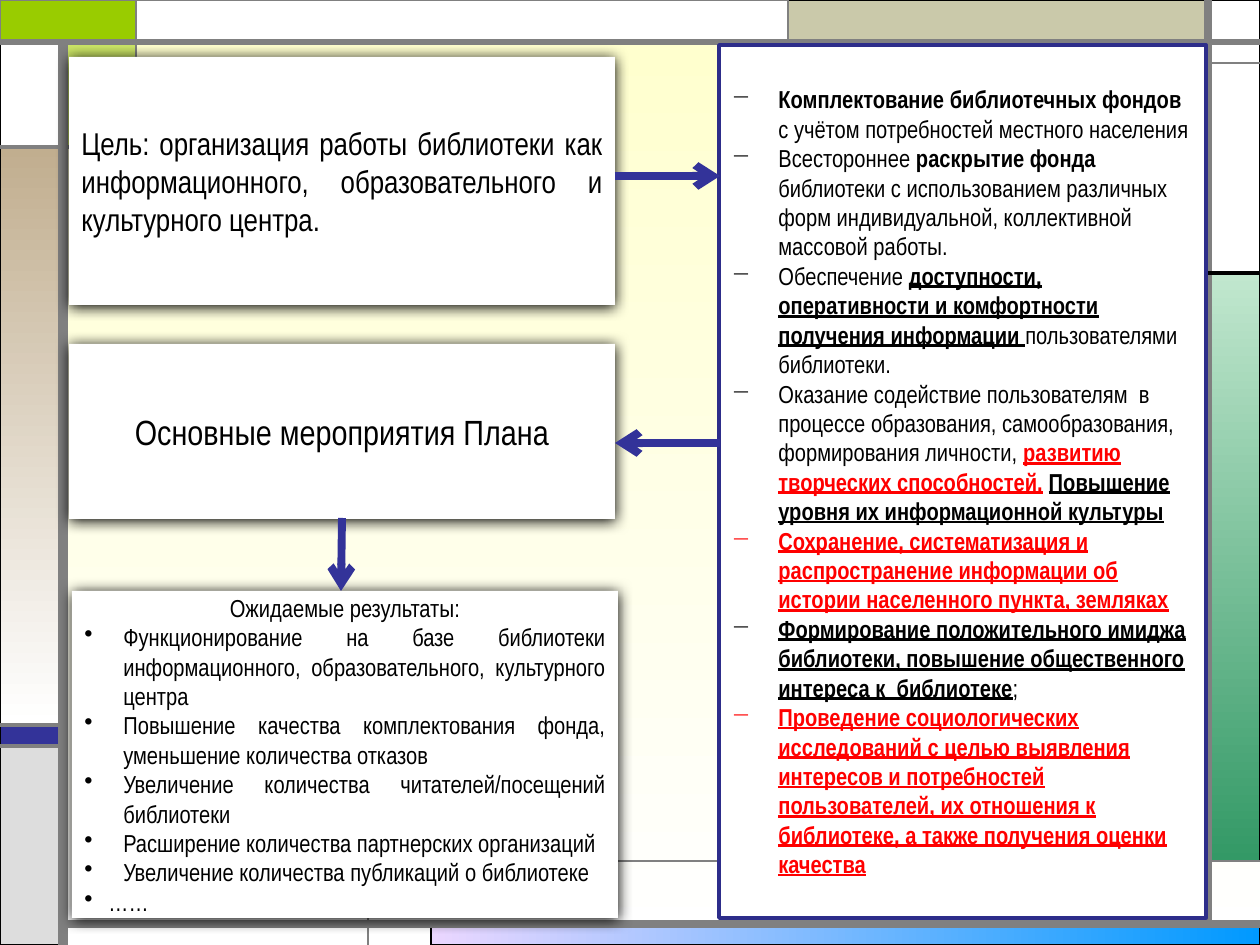
from lxml import etree
from pptx import Presentation
from pptx.dml.color import RGBColor
from pptx.enum.shapes import MSO_CONNECTOR, MSO_SHAPE
from pptx.enum.text import MSO_ANCHOR, PP_ALIGN
from pptx.oxml.ns import qn
from pptx.util import Pt

PX = 914400 / 126
WIDTH, HEIGHT = 1260, 945
RECT, STRAIGHT = MSO_SHAPE.RECTANGLE, MSO_CONNECTOR.STRAIGHT
MIDDLE = MSO_ANCHOR.MIDDLE
LEFT, CENTER, JUSTIFY = PP_ALIGN.LEFT, PP_ALIGN.CENTER, PP_ALIGN.JUSTIFY
RIGHTWARD, DOWNWARD = 0, 270
FONT = "Arial Narrow"
COLORS = {
    "black": "000000", "white": "FFFFFF", "gray": "808080", "red": "FF0000",
    "cream": "FFFFCC", "lilac": "EBD7FF", "azure": "0099FF", "mint": "C1E7CE",
    "green": "339966", "indigo": "333399", "navy": "2D2D8A", "silver": "DDDDDD",
    "khaki": "CAC9AA", "lime": "99CC00", "tan": "C1AE8F",
}
PLAIN = {"bold": False, "underline": False}
BOLD = {"bold": True, "underline": False}
MARKED = {"bold": True, "underline": True}
RED = {**MARKED, "color": "red"}

TASKS = [
    [("Комплектование библиотечных фондов ", BOLD),
     ("с учётом потребностей местного населения", PLAIN)],
    [("Всестороннее ", PLAIN), ("раскрытие фонда ", BOLD),
     ("библиотеки с использованием различных форм индивидуальной, "
      "коллективной массовой работы.", PLAIN)],
    [("Обеспечение ", PLAIN),
     ("доступности, оперативности и комфортности получения информации ", MARKED),
     ("пользователями библиотеки.", PLAIN)],
    [("Оказание содействие пользователям  в процессе образования, "
      "самообразования, формирования личности, ", PLAIN),
     ("развитию творческих способностей.", RED), (" ", PLAIN),
     ("Повышение уровня их информационной культуры", MARKED)],
    [("Сохранение, систематизация и распространение информации об истории "
      "населенного пункта, земляках", RED)],
    [("Формирование положительного имиджа библиотеки, повышение "
      "общественного интереса к  библиотеке", MARKED), (";", PLAIN)],
    [("Проведение социологических исследований с целью выявления интересов и "
      "потребностей пользователей, их отношения к библиотеке, а также "
      "получения оценки качества", RED)],
]
RESULTS = [
    "Функционирование на базе библиотеки информационного, образовательного, "
    "культурного центра",
    "Повышение качества комплектования фонда, уменьшение количества отказов",
    "Увеличение количества читателей/посещений библиотеки",
    "Расширение количества партнерских организаций",
    "Увеличение количества публикаций о библиотеке",
]


def emu(*lengths):
    return [round(length * PX) for length in lengths]


def rgb(name):
    return RGBColor.from_string(COLORS[name])


def paint_gradient(fill, names, angle):
    fill.gradient()
    fill.gradient_angle = angle
    for stop, name in zip(fill.gradient_stops, names):
        stop.color.rgb = rgb(name)


def add_rect(page, box, fill="white", line=None, weight=0.75):
    """Fill is a colour name, or (first, last, angle) for a gradient."""
    rect = page.shapes.add_shape(RECT, *emu(*box))
    rect.shadow.inherit = False
    if isinstance(fill, tuple):
        paint_gradient(rect.fill, fill[:2], fill[2])
    else:
        rect.fill.solid()
        rect.fill.fore_color.rgb = rgb(fill)
    if line:
        rect.line.color.rgb = rgb(line)
        rect.line.width = Pt(weight)
    else:
        rect.line.fill.background()
    return rect


def add_line(page, ends, color="gray", weight=1.5, arrow=False):
    line = page.shapes.add_connector(STRAIGHT, *emu(*ends))
    line.line.color.rgb = rgb(color)
    line.line.width = Pt(weight)
    if arrow:
        etree.SubElement(line.line._get_or_add_ln(), qn("a:tailEnd"), type="arrow")
    etree.SubElement(line._element.spPr, qn("a:effectLst"))


def add_para(frame, spans, size, align=LEFT, bullet=None, indent=0):
    para = frame.paragraphs[0]
    if para.runs:
        para = frame.add_paragraph()
    para.alignment = align
    if bullet:
        props = para._p.get_or_add_pPr()
        hang, = emu(indent)
        props.set("marL", str(hang))
        props.set("indent", str(-hang))
        etree.SubElement(props, qn("a:buChar"), char=bullet)
    for text, style in spans:
        span = para.add_run()
        span.text = text
        span.font.color.rgb = rgb(style.get("color", "black"))
        formats = {"name": FONT, "size": Pt(size),
                   "bold": style["bold"], "underline": style["underline"]}
        for key, value in formats.items():
            setattr(span.font, key, value)


def text_frame(rect):
    frame = rect.text_frame
    frame.word_wrap = True
    frame.vertical_anchor = MIDDLE
    return frame


def add_card(page, box):
    """White panel with a soft shadow; returns its text frame."""
    card = add_rect(page, box)
    effects = card._element.spPr.find(qn("a:effectLst"))
    shadow = etree.SubElement(effects, qn("a:outerShdw"), blurRad=str(Pt(8.5)),
                              dist=str(Pt(1)), dir="5400000", rotWithShape="0")
    etree.SubElement(shadow, qn("a:srgbClr"), val=COLORS["black"])
    return text_frame(card)


def add_backdrop(page, box):
    """Coloured tiles around the edge of the box, divided by gray lines."""
    x, y, width, height = box
    paint_gradient(page.background.fill, ("cream", "white"), DOWNWARD)
    tiles = [
        ((431, 924, 829, 21), ("lilac", "azure", RIGHTWARD)),
        ((1208, 273, 52, 588), ("mint", "green", DOWNWARD)),
        ((0, 725, 63, 21), "indigo"),
        ((0, 746, 63, 199), "silver"),
        ((1208, 0, 52, 273), "white"),
        ((788, 0, 420, 42), "khaki"),
        ((63, 42, 73, 105), "lime"),
        ((0, 147, 63, 578), ("tan", "white", DOWNWARD)),
        ((0, 42, 63, 105), "white"),
        ((0, 0, 136, 42), "lime", "gray", 1.5),
        ((136, 0, 652, 42), "white", "gray"),
    ]
    for (left, top, wide, high), fill, *outline in tiles:
        tile = add_rect(page, (x + left, y + top, wide, high), fill,
                        *(outline or ["black"]))
        if (left, top) == (63, 42):
            color = tile.fill._xPr.find(qn("a:solidFill"))[0]
            etree.SubElement(color, qn("a:alpha"), val="50000")
    lines = [
        ((63, height, 63, 42), "gray", 6),
        ((63, 924, width, 924), "gray", 4.5),
        ((1208, 924, 1208, 0), "gray", 4.5),
        ((0, 42, width, 42), "gray", 3),
        ((width, 63, 788, 63),),
        ((788, 63, 788, 0),),
        ((1208, 273, width, 273), "black", 2.25),
        ((136, 0, 136, 147),),
        ((136, 147, 0, 147), "gray", 2.25),
        ((368, height, 368, 861),),
        ((368, 861, width, 861),),
        ((63, 725, 0, 725), "gray", 2.25),
        ((63, 746, 0, 746), "gray", 2.25),
    ]
    for (x1, y1, x2, y2), *style in lines:
        add_line(page, (x + x1, y + y1, x + x2, y + y2), *style)


def add_tasks(page, box):
    frame = text_frame(add_rect(page, box, "white", "navy", 2))
    for spans in TASKS:
        add_para(frame, spans, 14, bullet="−", indent=47)


def add_results(page, box):
    frame = add_card(page, box)
    add_para(frame, [("Ожидаемые результаты:", PLAIN)], 14, CENTER)
    for text in RESULTS:
        add_para(frame, [(text, PLAIN)], 14, JUSTIFY, "•", 39)
    add_para(frame, [("……", PLAIN)], 14, JUSTIFY, "•", 24)


def add_plan(page, box):
    """Goal, tasks, measures and results, joined by arrows."""
    x, y, width, height = box
    goal = add_card(page, (x, y + 12, 546, 248))
    add_para(goal, [("Цель: организация работы библиотеки как информационного, "
                     "образовательного и культурного центра.", PLAIN)], 18, JUSTIFY)
    add_tasks(page, (x + 650, y, width - 650, height))
    measures = add_card(page, (x, y + 299, 546, 175))
    add_para(measures, [("Основные мероприятия Плана", PLAIN)], 20, CENTER)
    add_results(page, (x + 3, y + 546, 546, 327))
    for x1, y1, x2, y2 in [(546, 131, 651, 131), (651, 398, 546, 398),
                           (273, 473, 272, 546)]:
        add_line(page, (x + x1, y + y1, x + x2, y + y2), "indigo", 4.5, arrow=True)


def main():
    deck = Presentation()
    deck.slide_width, deck.slide_height = emu(WIDTH, HEIGHT)
    page = deck.slides.add_slide(deck.slide_layouts[6])
    add_backdrop(page, (0, 0, WIDTH, HEIGHT))
    add_plan(page, (69, 45, 1137, 873))
    deck.save("out.pptx")


if __name__ == "__main__":
    main()
